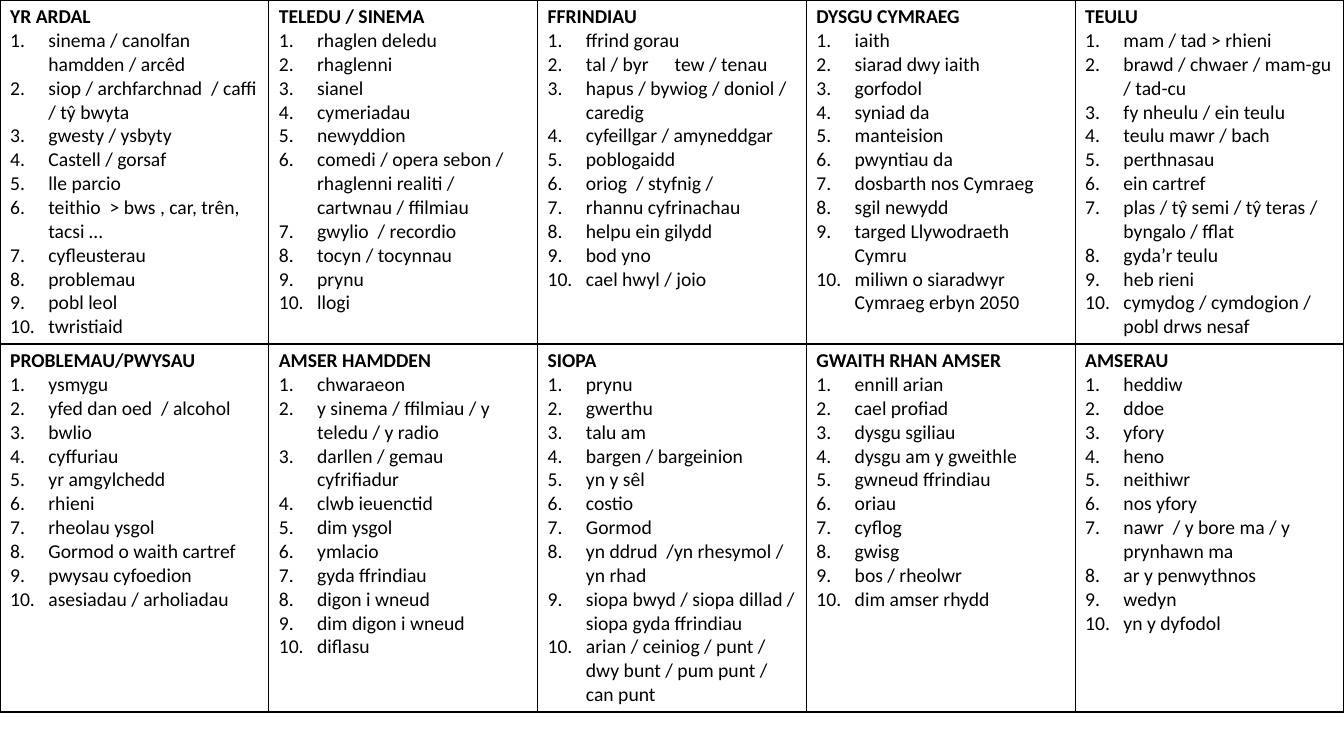
import lxml.etree
import pptx
import pptx.dml.color
import pptx.oxml.ns
import pptx.util

Inches = pptx.util.Inches
qn = pptx.oxml.ns.qn

TOPICS = [
    [
        ("YR ARDAL", ["sinema / canolfan hamdden / arcêd", "siop / archfarchnad  / caffi / tŷ bwyta",
                      "gwesty / ysbyty", "Castell / gorsaf", "lle parcio",
                      "teithio  > bws , car, trên, tacsi …", "cyfleusterau", "problemau",
                      "pobl leol", "twristiaid"]),
        ("TELEDU / SINEMA", ["rhaglen deledu", "rhaglenni", "sianel", "cymeriadau", "newyddion",
                             "comedi / opera sebon / rhaglenni realiti / cartwnau / ffilmiau",
                             "gwylio  / recordio", "tocyn / tocynnau", "prynu", "llogi"]),
        ("FFRINDIAU", ["ffrind gorau", "tal / byr\ttew / tenau", "hapus / bywiog / doniol / caredig",
                       "cyfeillgar / amyneddgar", "poblogaidd", "oriog  / styfnig /",
                       "rhannu cyfrinachau", "helpu ein gilydd", "bod yno", "cael hwyl / joio"]),
        ("DYSGU CYMRAEG", ["iaith", "siarad dwy iaith", "gorfodol", "syniad da", "manteision",
                           "pwyntiau da", "dosbarth nos Cymraeg", "sgil newydd",
                           "targed Llywodraeth Cymru", "miliwn o siaradwyr Cymraeg erbyn 2050"]),
        ("TEULU", ["mam / tad > rhieni", "brawd / chwaer / mam-gu / tad-cu", "fy nheulu / ein teulu",
                   "teulu mawr / bach", "perthnasau", "ein cartref",
                   "plas / tŷ semi / tŷ teras / byngalo / fflat", "gyda’r teulu", "heb rieni",
                   "cymydog / cymdogion / pobl drws nesaf"]),
    ],
    [
        ("PROBLEMAU/PWYSAU", ["ysmygu", "yfed dan oed  / alcohol", "bwlio", "cyffuriau",
                              "yr amgylchedd", "rhieni", "rheolau ysgol", "Gormod o waith cartref",
                              "pwysau cyfoedion", "asesiadau / arholiadau"]),
        ("AMSER HAMDDEN", ["chwaraeon", "y sinema / ffilmiau / y teledu / y radio",
                           "darllen / gemau cyfrifiadur", "clwb ieuenctid", "dim ysgol", "ymlacio",
                           "gyda ffrindiau", "digon i wneud", "dim digon i wneud", "diflasu"]),
        ("SIOPA", ["prynu", "gwerthu", "talu am", "bargen / bargeinion", "yn y sêl", "costio",
                   "Gormod", "yn ddrud  /yn rhesymol / yn rhad",
                   "siopa bwyd / siopa dillad / siopa gyda ffrindiau",
                   "arian / ceiniog / punt / dwy bunt / pum punt / can punt"]),
        ("GWAITH RHAN AMSER", ["ennill arian", "cael profiad", "dysgu sgiliau", "dysgu am y gweithle",
                               "gwneud ffrindiau", "oriau", "cyflog", "gwisg", "bos / rheolwr",
                               "dim amser rhydd"]),
        ("AMSERAU", ["heddiw", "ddoe", "yfory", "heno", "neithiwr", "nos yfory",
                     "nawr  / y bore ma / y prynhawn ma", "ar y penwythnos", "wedyn",
                     "yn y dyfodol"]),
    ],
]


def paint(color, hex_color):
    color.rgb = pptx.dml.color.RGBColor.from_string(hex_color)


def add_text(p, text, bold):
    r = p.add_run()
    r.text = text
    r.font.name = "Calibri"
    r.font.size = pptx.util.Pt(14)
    r.font.bold = bold
    paint(r.font.color, "000000")


prs = pptx.Presentation()
prs.slide_width = Inches(13.33)
prs.slide_height = Inches(7.5)
s = prs.slides.add_slide(prs.slide_layouts[6])

table = s.shapes.add_table(2, 5, 0, 0, prs.slide_width, Inches(6.97)).table
table.first_row = False
table.horz_banding = False
table.rows[0].height = Inches(3.4)
table.rows[1].height = Inches(3.57)

for row, topics in enumerate(TOPICS):
    for col, (title, words) in enumerate(topics):
        cell = table.cell(row, col)

        tcPr = cell._tc.get_or_add_tcPr()
        for side in ("a:lnL", "a:lnR", "a:lnT", "a:lnB"):
            ln = lxml.etree.SubElement(tcPr, qn(side), w=str(pptx.util.Pt(1)))
            fill = lxml.etree.SubElement(ln, qn("a:solidFill"))
            lxml.etree.SubElement(fill, qn("a:srgbClr"), val="000000")
        cell.fill.solid()
        paint(cell.fill.fore_color, "FFFFFF")

        tf = cell.text_frame
        add_text(tf.paragraphs[0], title, True)
        for word in words:
            p = tf.add_paragraph()
            pPr = p._p.get_or_add_pPr()
            pPr.set("marL", str(Inches(0.38)))
            pPr.set("indent", str(-Inches(0.38)))
            lxml.etree.SubElement(pPr, qn("a:buFont"), typeface="+mj-lt")
            lxml.etree.SubElement(pPr, qn("a:buAutoNum"), type="arabicPeriod")
            if "\t" in word:
                tabs = lxml.etree.SubElement(pPr, qn("a:tabLst"))
                lxml.etree.SubElement(tabs, qn("a:tab"), pos=str(Inches(1.26)), algn="l")
            add_text(p, word, False)

prs.save("out.pptx")
